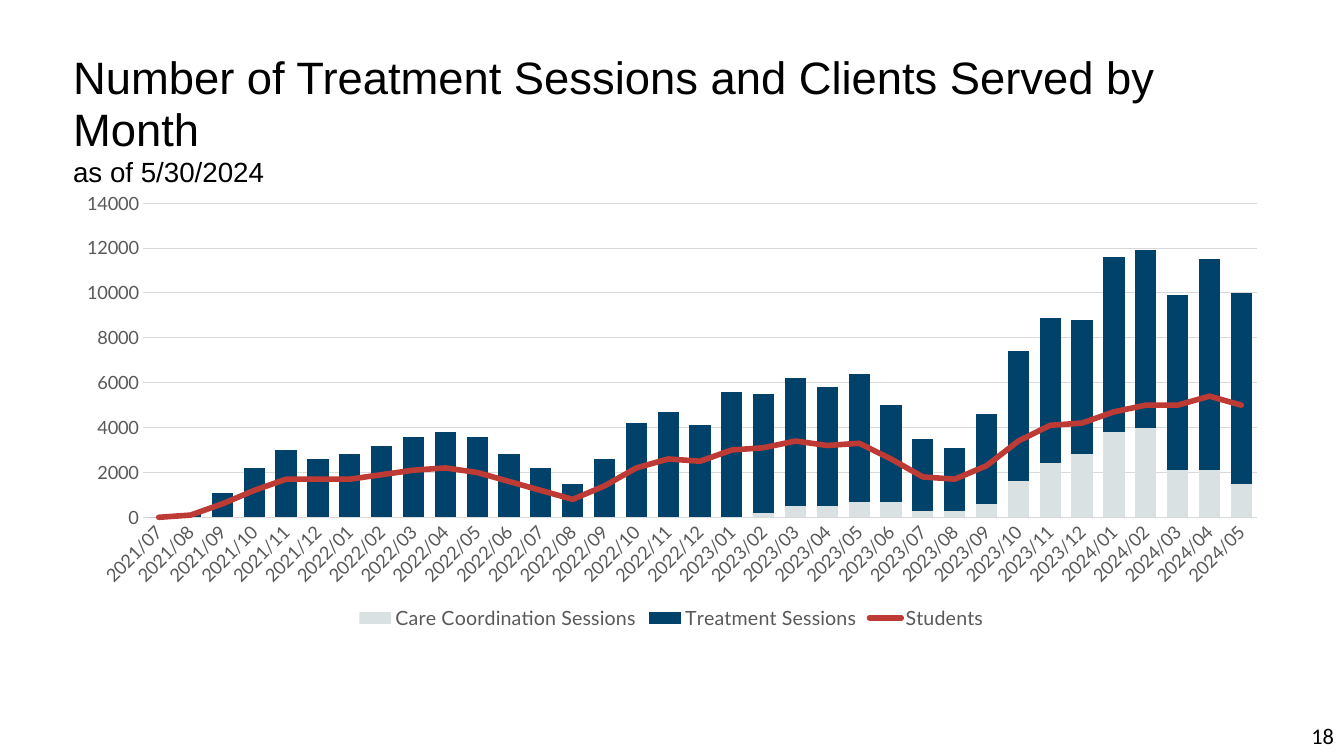
from pptx import Presentation
from pptx.chart.data import CategoryChartData
from pptx.dml.color import RGBColor
from pptx.enum.chart import (XL_CHART_TYPE, XL_LEGEND_POSITION,
                             XL_MARKER_STYLE, XL_TICK_MARK)
from pptx.enum.text import MSO_ANCHOR, MSO_AUTO_SIZE, PP_ALIGN
from pptx.oxml import parse_xml
from pptx.oxml.ns import nsdecls, qn
from pptx.util import Pt

BLACK, GRAY, RULE = "000000", "595959", "D9D9D9"
PALE, NAVY, RED = "D9E1E2", "01426A", "BE3A34"

# Months from 2021/07 to 2024/05
MONTHS = [f"{2021 + m // 12}/{m % 12 + 1:02}" for m in range(6, 41)]
CARE = [0] * 19 + [200, 500, 500, 700, 700, 300, 300, 600, 1600, 2400, 2800,
                   3800, 4000, 2100, 2100, 1500]
TREAT = [0, 200, 1100, 2200, 3000, 2600, 2800, 3200, 3600, 3800, 3600, 2800,
         2200, 1500, 2600, 4200, 4700, 4100, 5600, 5300, 5700, 5300, 5700,
         4300, 3200, 2800, 4000, 5800, 6500, 6000, 7800, 7900, 7800, 9400, 8500]
PUPILS = [0, 100, 600, 1200, 1700, 1700, 1700, 1900, 2100, 2200, 2000, 1600,
          1200, 800, 1400, 2200, 2600, 2500, 3000, 3100, 3400, 3200, 3300,
          2600, 1800, 1700, 2300, 3400, 4100, 4200, 4700, 5000, 5000, 5400, 5000]


def color(code):
    return RGBColor.from_string(code)


class Page:
    head_font, note_font, chart_font = "Arial", "Calibri", "Lato"

    def __init__(self, deck):
        self.slide = deck.slides.add_slide(deck.slide_layouts[5])

    def style(self, font, name, size, code):
        font.name, font.size = name, Pt(size)
        font.color.rgb = color(code)

    def rule(self, line, code, width):
        line.color.rgb = color(code)
        line.width = Pt(width)

    def title(self, text, sizes, x, y, w, h):
        box = self.slide.shapes.title
        box.left, box.top, box.width, box.height = Pt(x), Pt(y), Pt(w), Pt(h)
        frame = box.text_frame
        frame.text = text
        frame.word_wrap = True
        frame.auto_size = MSO_AUTO_SIZE.NONE
        frame.vertical_anchor = MSO_ANCHOR.TOP
        para = frame.paragraphs[0]
        para.alignment = PP_ALIGN.LEFT
        para.line_spacing = 0.95
        for run, size in zip(para.runs, sizes):
            self.style(run.font, self.head_font, size, BLACK)

    def number(self, text, x, y, w, h):
        frame = self.slide.shapes.add_textbox(Pt(x), Pt(y), Pt(w), Pt(h)).text_frame
        frame.text = text
        frame.word_wrap = True
        frame.vertical_anchor = MSO_ANCHOR.MIDDLE
        para = frame.paragraphs[0]
        para.alignment = PP_ALIGN.RIGHT
        self.style(para.runs[0].font, self.note_font, 16, BLACK)

    def chart(self, months, bars, line, x, y, w, h):
        data = CategoryChartData()
        data.categories = months
        for name, vals, _ in bars + [line]:
            data.add_series(name, vals)
        chart = self.slide.shapes.add_chart(
            XL_CHART_TYPE.COLUMN_STACKED, Pt(x), Pt(y), Pt(w), Pt(h), data).chart
        chart.has_title = False
        self.style(chart.font, self.note_font, 10, BLACK)

        # Stacked columns
        plot = chart.plots[0]
        plot.gap_width, plot.overlap = 50, 100
        plot.vary_by_categories = False
        for item, (_, _, code) in zip(plot.series, bars):
            item.format.fill.solid()
            item.format.fill.fore_color.rgb = color(code)

        self.add_line(chart, line[2])
        self.axes(chart)
        self.legend(chart)
        self.place(chart, 0.066, 0.044, 0.915, 0.697)

    def add_line(self, chart, code):
        # Move the last series into a line plot on the same axes
        cols = chart.plots[0]._element
        last = cols.findall(qn("c:ser"))[-1]
        flag = last.find(qn("c:invertIfNegative"))
        if flag is not None:
            last.remove(flag)
        ids = "".join(f'<c:axId val="{a.get("val")}"/>'
                      for a in cols.findall(qn("c:axId")))
        group = parse_xml(
            f'<c:lineChart {nsdecls("c")}><c:grouping val="standard"/>'
            f'<c:varyColors val="0"/><c:marker val="1"/>{ids}</c:lineChart>')
        group.insert(2, last)
        cols.addnext(group)
        item = chart.plots[1].series[0]
        item.smooth = False
        item.marker.style = XL_MARKER_STYLE.NONE
        self.rule(item.format.line, code, 4)
        stroke = last.find(qn("c:spPr")).find(qn("a:ln"))
        stroke.set("cap", "rnd")
        stroke.append(parse_xml(f'<a:round {nsdecls("a")}/>'))

    def axes(self, chart):
        cat, val = chart.category_axis, chart.value_axis
        for axis in (cat, val):
            axis.major_tick_mark = axis.minor_tick_mark = XL_TICK_MARK.NONE
            self.style(axis.tick_labels.font, self.chart_font, 13, GRAY)
        self.rule(cat.format.line, RULE, 0.75)
        body = cat._element.find(qn("c:txPr")).find(qn("a:bodyPr"))
        body.set("rot", "-2700000")
        body.set("vert", "horz")
        val.minimum_scale, val.maximum_scale, val.major_unit = 0, 14000, 2000
        val.format.line.fill.background()
        val.has_major_gridlines = True
        self.rule(val.major_gridlines.format.line, RULE, 0.75)

    def legend(self, chart):
        chart.has_legend = True
        chart.legend.position = XL_LEGEND_POSITION.BOTTOM
        chart.legend.include_in_layout = False
        self.style(chart.legend.font, self.chart_font, 14, GRAY)

    def place(self, chart, x, y, w, h):
        # Fix the inner plot area as shares of the chart
        area = chart._chartSpace.chart.plotArea
        old = area.find(qn("c:layout"))
        if old is not None:
            area.remove(old)
        parts = "".join(f'<c:{k} val="{v}"/>' for k, v in (
            ("layoutTarget", "inner"), ("xMode", "edge"), ("yMode", "edge"),
            ("x", x), ("y", y), ("w", w), ("h", h)))
        area.insert(0, parse_xml(
            f'<c:layout {nsdecls("c")}><c:manualLayout>{parts}'
            f'</c:manualLayout></c:layout>'))


def main():
    deck = Presentation()
    deck.slide_width, deck.slide_height = Pt(960), Pt(540)
    page = Page(deck)

    # Heading
    page.title("Number of Treatment Sessions and Clients Served by Month\v"
               "as of 5/30/2024", (32.4, 19.8), 45, 34.6, 870, 67.7)

    # Page number
    page.number("18", 744, 511, 216, 29)

    # Sessions as columns, students as a line
    page.chart(MONTHS,
               [("Care Coordination Sessions", CARE, PALE),
                ("Treatment Sessions", TREAT, NAVY)],
               ("Students", PUPILS, RED), 44.6, 131, 870, 322)
    deck.save("out.pptx")


if __name__ == "__main__":
    main()
